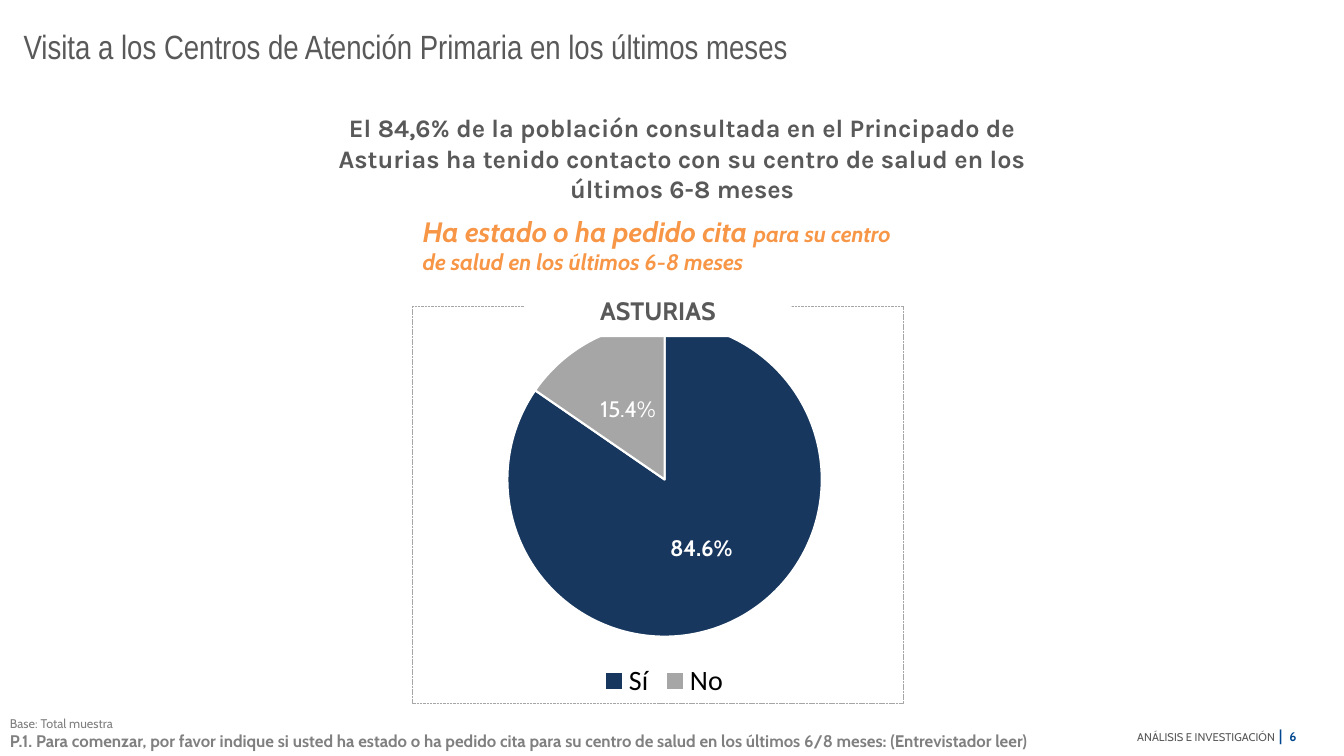
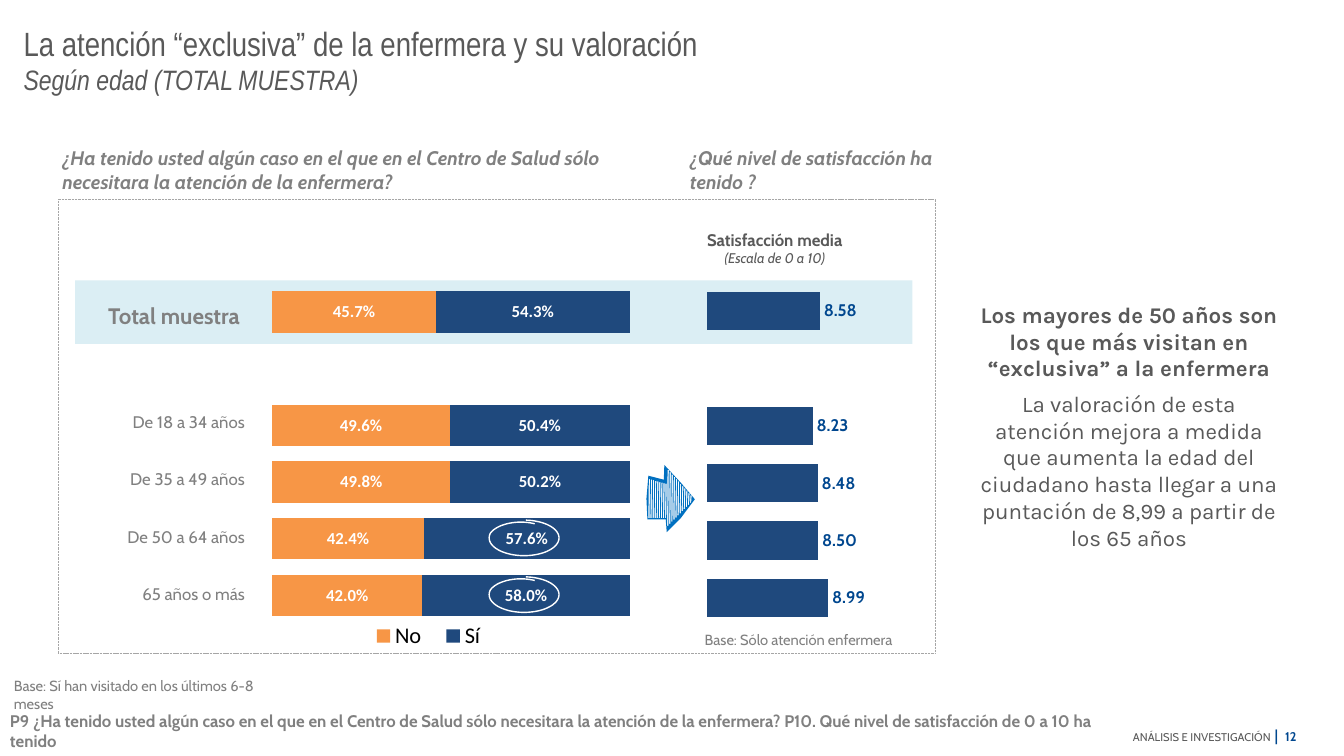
import copy
import math
from dataclasses import dataclass
from typing import Optional

import lxml.etree
import pptx
import pptx.chart.data
import pptx.dml.color
import pptx.enum.chart
import pptx.enum.dml
import pptx.enum.shapes
import pptx.enum.text
import pptx.oxml.ns
import pptx.util

SLIDE_WIDTH = pptx.util.Inches(13.333)
SLIDE_HEIGHT = pptx.util.Inches(7.5)
WHITE, DARK, GREY, SILVER = "FFFFFF", "595959", "808080", "A6A6A6"
ORANGE, NAVY, BLUE, BRAND = "F79646", "17375E", "1F497D", "00478F"
BAND, ARROW = "DBEEF4", "0070C0"
PERCENT = r"0.0\%"

Align = pptx.enum.text.PP_ALIGN
Anchor = pptx.enum.text.MSO_ANCHOR
ChartType = pptx.enum.chart.XL_CHART_TYPE
LabelPosition = pptx.enum.chart.XL_LABEL_POSITION
qn = pptx.oxml.ns.qn


def across(share: float) -> int:
    """Percent of the slide's width as a length."""
    return round(SLIDE_WIDTH * share / 100)


def down(share: float) -> int:
    """Percent of the slide's height as a length."""
    return round(SLIDE_HEIGHT * share / 100)


@dataclass(frozen=True)
class Box:
    """A place given in percent of the slide's size."""
    left: float
    top: float
    width: float
    height: float

    def lengths(self) -> tuple:
        return across(self.left), down(self.top), across(self.width), down(self.height)

    def point(self, x: float, y: float) -> tuple:
        """A point given as shares of this box."""
        return across(self.left + x * self.width), down(self.top + y * self.height)


@dataclass(frozen=True)
class Run:
    text: str
    size: float
    color: str = GREY
    font: str = "Cabin"
    bold: bool = False
    italic: bool = False


@dataclass(frozen=True)
class Series:
    name: str
    values: tuple
    color: str


def rgb(color: str) -> pptx.dml.color.RGBColor:
    return pptx.dml.color.RGBColor.from_string(color)


def paint(fill, color: str) -> None:
    fill.solid()
    fill.fore_color.rgb = rgb(color)


def format_font(font, *, size: float, color: str, name: str = "Cabin",
                bold: bool = False, italic: bool = False) -> None:
    font.size, font.name = pptx.util.Pt(size), name
    font.bold, font.italic = bold, italic
    font.color.rgb = rgb(color)


def write(frame, *paragraphs: list, align=Align.LEFT, space_after: float = 0) -> None:
    """Fill a text frame with one paragraph for each list of runs."""
    for index, runs in enumerate(paragraphs):
        paragraph = frame.add_paragraph() if index else frame.paragraphs[0]
        paragraph.alignment = align
        paragraph.space_after = pptx.util.Pt(space_after)
        for item in runs:
            run = paragraph.add_run()
            run.text = item.text
            format_font(run.font, size=item.size, color=item.color, name=item.font,
                        bold=item.bold, italic=item.italic)


def set_frame(frame, anchor) -> None:
    frame.word_wrap = True
    frame.auto_size = pptx.enum.text.MSO_AUTO_SIZE.NONE
    frame.vertical_anchor = anchor


def add_text(slide, box: Box, *paragraphs: list, anchor=Anchor.TOP, **layout):
    shape = slide.shapes.add_textbox(*box.lengths())
    set_frame(shape.text_frame, anchor)
    write(shape.text_frame, *paragraphs, **layout)
    return shape


def add_label(slide, box: Box, *paragraphs: list, **layout) -> None:
    """Text on a white ground that covers what lies behind it."""
    paint(add_text(slide, box, *paragraphs, **layout).fill, WHITE)


def add_rectangle(slide, box: Box, fill: Optional[str] = None) -> None:
    """A filled band, or a dashed frame when no fill is given."""
    shape = slide.shapes.add_shape(pptx.enum.shapes.MSO_SHAPE.RECTANGLE, *box.lengths())
    shape.shadow.inherit = False
    if fill:
        paint(shape.fill, fill)
        shape.line.fill.background()
    else:
        shape.fill.background()
        shape.line.color.rgb = rgb(SILVER)
        shape.line.width = pptx.util.Pt(0.25)
        shape.line.dash_style = pptx.enum.dml.MSO_LINE.SQUARE_DOT


def add_slide(presentation, number: int, title_box: Box, *title: list):
    """Title-only slide with the shared title style and footer."""
    slide = presentation.slides.add_slide(presentation.slide_layouts[5])
    shape = slide.shapes.title
    shape.left, shape.top, shape.width, shape.height = title_box.lengths()
    set_frame(shape.text_frame, Anchor.TOP)
    write(shape.text_frame, *title)
    add_text(slide, Box(82.9, 95.3, 14.3, 3.9),
             [Run("ANÁLISIS E INVESTIGACIÓN", 8, DARK), Run(" ", 11, DARK),
              Run("|  ", 11, BRAND, bold=True), Run(str(number), 9, BRAND, bold=True)],
             anchor=Anchor.MIDDLE, align=Align.RIGHT)
    return slide


def add_chart(slide, box: Box, kind, categories: list, series: list):
    data = pptx.chart.data.CategoryChartData()
    data.categories = categories
    for item in series:
        data.add_series(item.name, item.values)
    chart = slide.shapes.add_chart(kind, *box.lengths(), data).chart
    chart.has_title = False
    chart.has_legend = False
    format_font(chart.font, size=10, color="000000", name="Calibri")
    return chart


def add_legend(chart, size: float) -> None:
    chart.has_legend = True
    chart.legend.position = pptx.enum.chart.XL_LEGEND_POSITION.BOTTOM
    chart.legend.include_in_layout = False
    format_font(chart.legend.font, size=size, color="000000", name="Calibri")


def show_labels(labels, number_format: str, position, **font) -> None:
    labels.show_value = True
    labels.number_format = number_format
    labels.number_format_is_linked = False
    labels.position = position
    format_font(labels.font, **font)


def place_part(part, index: int, inner: bool, **shares: float) -> None:
    """Give a plot area or legend a manual place within its chart."""
    for old in part.findall(qn("c:layout")):
        part.remove(old)
    layout = lxml.etree.Element(qn("c:layout"))
    manual = lxml.etree.SubElement(layout, qn("c:manualLayout"))
    settings = {"layoutTarget": "inner"} if inner else {}
    settings |= {"xMode": "edge", "yMode": "edge"} | shares
    for name, value in settings.items():
        lxml.etree.SubElement(manual, qn(f"c:{name}")).set("val", str(value))
    part.insert(index, layout)


def add_bars(slide, box: Box, kind, series: list, *, scale: tuple, gap: int, plot_place: dict,
             number_format: str, position, **label_font):
    chart = add_chart(slide, box, kind, list("123456"), series)
    chart.category_axis.reverse_order = True
    chart.value_axis.minimum_scale, chart.value_axis.maximum_scale = scale
    chart.value_axis.has_major_gridlines = False
    chart.category_axis.visible = chart.value_axis.visible = False
    plot = chart.plots[0]
    plot.vary_by_categories = False
    plot.gap_width = gap
    for drawn, item in zip(plot.series, series):
        paint(drawn.format.fill, item.color)
        show_labels(drawn.data_labels, number_format, position, **label_font)
    place_part(chart.element.find(".//" + qn("c:plotArea")), 0, True, **plot_place)
    return chart


def add_pie(slide, box: Box) -> None:
    chart = add_chart(slide, box, ChartType.PIE, ["Sí", "No"], [Series("Series 1", (84.6, 15.4), NAVY)])
    add_legend(chart, 20)
    series = chart.plots[0].series[0]
    for index, color in enumerate((NAVY, SILVER)):
        point = series.points[index].format
        paint(point.fill, color)
        point.line.color.rgb = rgb(WHITE)
        point.line.width = pptx.util.Pt(1.5)
    show_labels(series.data_labels, PERCENT, LabelPosition.CENTER, size=16, color=WHITE)
    main_label = series.points[0].data_label
    format_font(main_label.font, size=16, color=WHITE, bold=True)
    main_label.position = LabelPosition.CENTER
    number_format = chart.element.find(".//" + qn("c:dLbls") + "/" + qn("c:numFmt"))
    chart.element.find(".//" + qn("c:dLbl")).insert(1, copy.deepcopy(number_format))


def add_age_table(slide, box: Box) -> None:
    rows = ["Total muestra", "", "De 18 a 34 años", "De 35 a 49 años", "De 50 a 64 años", "65 años o más"]
    table = slide.shapes.add_table(len(rows), 1, *box.lengths()).table
    table.first_row = table.horz_banding = False
    for index, text in enumerate(rows):
        table.rows[index].height = down(6.8 if index < 2 else 7.6)
        cell = table.cell(index, 0)
        cell.vertical_anchor = Anchor.MIDDLE
        cell.margin_left = cell.margin_right = cell.margin_top = pptx.util.Inches(0.01)
        cell.margin_bottom = 0
        if text:
            heading = index == 0
            write(cell.text_frame, [Run(text, 16 if heading else 12, bold=heading)], align=Align.RIGHT)
            if heading:
                cell.margin_right = pptx.util.Inches(0.06)
        cell.fill.background()
        properties = cell.fill._xPr
        for place, side in enumerate(("lnL", "lnR", "lnT", "lnB")):
            border = lxml.etree.Element(qn(f"a:{side}"))
            lxml.etree.SubElement(border, qn("a:noFill"))
            properties.insert(place, border)


def add_hatched_arrow(slide, box: Box) -> None:
    outline = [(0.04, 0.16), (0.36, 0.22), (0.37, 0), (0.73, 0.28), (1, 0.51),
               (0.71, 0.79), (0.42, 1), (0.4, 0.81), (0.02, 0.81), (0, 0.5)]
    contours = [outline]
    for index in range(21):
        x = 0.05 + index * 0.043
        if x < 0.4:
            top, bottom = 0.2 + 0.2 * x, 0.79
        else:
            top, bottom = 0.06 + 0.8 * (x - 0.42), 0.92 - 0.73 * (x - 0.42)
        contours.append([(x, top), (x - 0.01, bottom), (x + 0.015, bottom), (x + 0.025, top)])
    builder = slide.shapes.build_freeform(*box.point(*outline[0]))
    for index, contour in enumerate(contours):
        points = [box.point(*point) for point in contour]
        if index:
            builder.move_to(*points[0])
        builder.add_line_segments(points[1:], close=True)
    shape = builder.convert_to_shape()
    shape.shadow.inherit = False
    paint(shape.fill, ARROW)
    shape.line.fill.background()


def add_ring(slide, box: Box) -> None:
    """A hand-drawn loop that starts a little inside its own end."""
    points = []
    for step in range(73):
        turn = step / 72
        angle = math.radians(-69 - 378 * turn)
        radius = 0.5 * min(1, 0.85 + 0.6 * turn)
        points.append(box.point(0.5 + radius * math.cos(angle), 0.5 + radius * math.sin(angle)))
    builder = slide.shapes.build_freeform(*points[0])
    builder.add_line_segments(points[1:], close=False)
    shape = builder.convert_to_shape()
    shape.shadow.inherit = False
    shape.fill.background()
    shape.line.color.rgb = rgb(WHITE)
    shape.line.width = pptx.util.Pt(1)


def build_visits(presentation) -> None:
    slide = add_slide(presentation, 6, Box(1, 2.8, 79.8, 12.1), [
        Run("Visita a los Centros de Atención Primaria en los últimos meses", 24, DARK, "Arial Narrow")])
    add_text(slide, Box(0, 94.1, 77.4, 5.9), [Run("Base: Total muestra", 9)], [
        Run("P.1. Para comenzar, por favor indique si usted ha estado o ha pedido cita para su centro de "
            "salud en los últimos 6/8 meses: (Entrevistador leer)", 12, bold=True)], anchor=Anchor.BOTTOM)
    add_label(slide, Box(30.7, 27.7, 36.5, 9.5), [
        Run("Ha estado o ha pedido cita ", 20, ORANGE, bold=True, italic=True),
        Run("para su centro de salud en los últimos 6-8 meses", 16, ORANGE, bold=True, italic=True)])
    add_text(slide, Box(22.4, 14.1, 56.7, 13.6), [
        Run("El 84,6% de la población consultada en el Principado de Asturias ha tenido contacto con su "
            "centro de salud en los últimos 6-8 meses", 18, DARK, "Karla", bold=True)],
        anchor=Anchor.MIDDLE, align=Align.CENTER, space_after=6)
    add_rectangle(slide, Box(30.7, 40.5, 36.5, 52.5))
    add_pie(slide, Box(32.4, 40.8, 34.1, 52.3))
    add_label(slide, Box(39, 37.5, 19.9, 7.1), [Run("ASTURIAS", 18, DARK, bold=True)],
              anchor=Anchor.MIDDLE, align=Align.CENTER)


def build_nurse_care(presentation) -> None:
    slide = add_slide(
        presentation, 12, Box(1, 2.3, 85.6, 11.2),
        [Run("La atención “exclusiva” de la enfermera y su valoración", 24, DARK, "Arial Narrow")],
        [Run("Según edad (TOTAL MUESTRA)", 20, DARK, "Arial Narrow", italic=True)])
    add_rectangle(slide, Box(5.6, 37.1, 62.3, 8.4), BAND)
    add_text(slide, Box(0, 93.5, 82.5, 6.5), [
        Run("P9 ¿Ha tenido usted algún caso en el que en el Centro de Salud sólo necesitara la atención de la "
            "enfermera? P10. Qué nivel de satisfacción de 0 a 10 ha tenido", 12, bold=True)],
        anchor=Anchor.BOTTOM)
    answers = add_bars(
        slide, Box(19.7, 37.5, 28, 53.6), ChartType.BAR_STACKED,
        [Series("No", (45.7, None, 49.6, 49.8, 42.4, 42.0), ORANGE),
         Series("Sí", (54.3, None, 50.4, 50.2, 57.6, 58.0), BLUE)],
        scale=(0, 100), gap=37, plot_place=dict(x=0.02, y=0, w=0.95, h=0.84),
        number_format=PERCENT, position=LabelPosition.CENTER,
        size=12, color=WHITE, name="Calibri", bold=True)
    answers.plots[0].overlap = 100
    add_legend(answers, 16)
    place_part(answers.element.find(".//" + qn("c:legend")), 1, False, x=0.25, y=0.83, w=0.37, h=0.08)
    add_age_table(slide, Box(5.6, 38.4, 12.7, 43.9))
    add_rectangle(slide, Box(4.3, 26.3, 65.3, 60.1))
    questions = [
        (Box(3.9, 18.7, 43.9, 7.6), "¿Ha tenido usted algún caso en el que en el Centro de Salud sólo "
                                    "necesitara la atención de la enfermera?"),
        (Box(50.6, 18.7, 20.3, 7.6), "¿Qué nivel de satisfacción ha tenido ?")]
    for box, question in questions:
        add_text(slide, box, [Run(question, 14, bold=True, italic=True)])
    add_hatched_arrow(slide, Box(48.1, 61.5, 3.6, 8.9))
    add_bars(slide, Box(52.1, 33.9, 24, 49.5), ChartType.BAR_CLUSTERED,
             [Series("Series 1", (8.58, None, 8.23, 8.48, 8.5, 8.99), BLUE)],
             scale=(3, 10), gap=50, plot_place=dict(x=0.02, y=0.07, w=0.44, h=0.92),
             number_format="#,##0.00", position=LabelPosition.OUTSIDE_END,
             size=12, color=BRAND, bold=True)
    add_label(slide, Box(49, 29.7, 17.3, 6.3), [Run("Satisfacción media", 12, DARK, bold=True)],
              [Run("(Escala de 0 a 10)", 10, DARK, italic=True)], align=Align.CENTER)
    for box, base in [(Box(51.7, 82.8, 16.5, 3.7), "Base: Sólo atención enfermera"),
                      (Box(0.3, 88.9, 21.8, 3.7), "Base: Sí han visitado en los últimos 6-8 meses")]:
        add_text(slide, box, [Run(base, 10.5)])
    add_text(slide, Box(72.2, 38.9, 23.6, 34.9), [
        Run("Los mayores de 50 años son los que más visitan en “exclusiva” a la enfermera",
            16, DARK, "Karla", bold=True)], [
        Run("La valoración de esta atención mejora a medida que aumenta la edad del ciudadano hasta llegar a "
            "una puntación de 8,99 a partir de los 65 años", 16, DARK, "Karla")],
        anchor=Anchor.MIDDLE, align=Align.CENTER, space_after=6)
    for row in range(2):
        add_ring(slide, Box(36.4, 68.8 + 7.5 * row, 5.2, 4.7))


def main() -> None:
    presentation = pptx.Presentation()
    presentation.slide_width, presentation.slide_height = SLIDE_WIDTH, SLIDE_HEIGHT
    build_visits(presentation)
    build_nurse_care(presentation)
    presentation.save("out.pptx")


if __name__ == "__main__":
    main()
